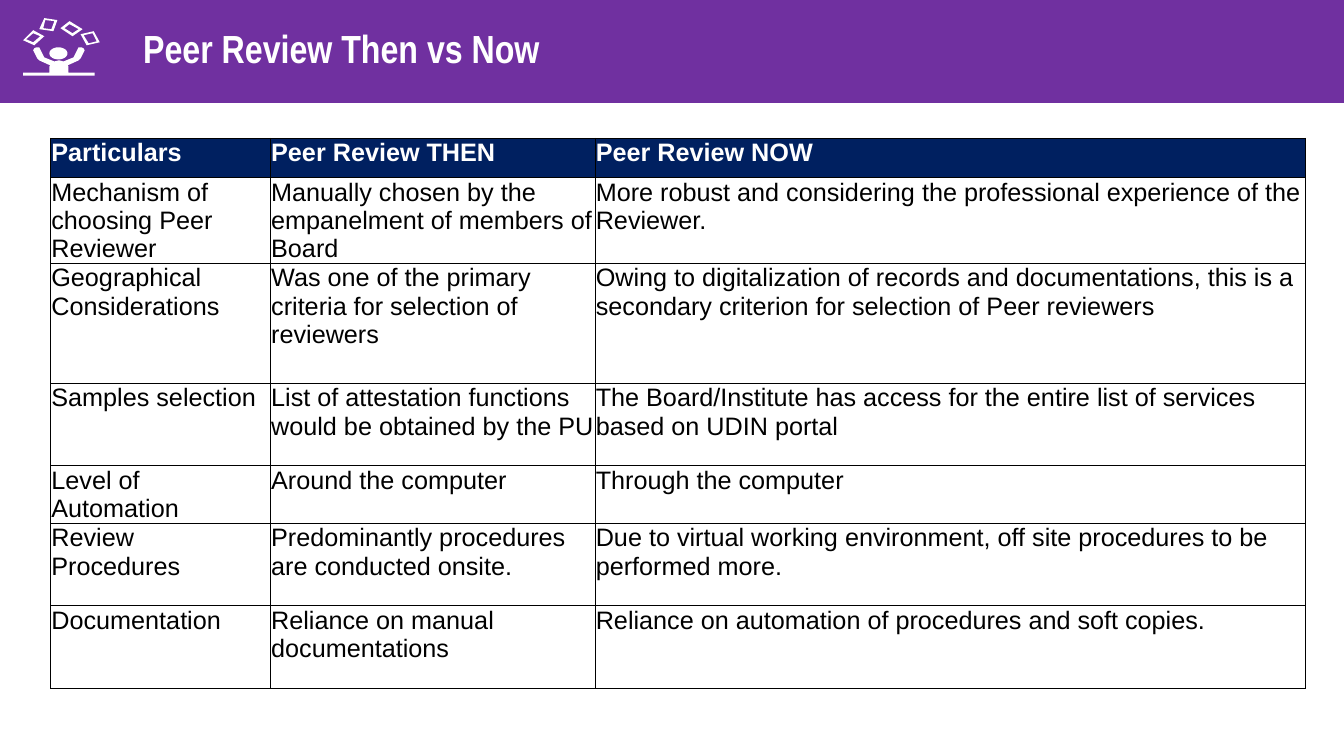
from math import cos, pi, sin

from lxml.etree import SubElement as Sub
from pptx import Presentation
from pptx.dml.color import RGBColor as Rgb
from pptx.enum.shapes import MSO_SHAPE as Shape
from pptx.enum.text import MSO_ANCHOR as Anchor, PP_ALIGN as Align
from pptx.oxml.ns import qn
from pptx.util import Inches, Pt

COLS = [2.18, 3.22, 7.05]
HIGH = [0.39, 0.82, 1.19, 0.82, 0.45, 0.82, 0.82]
ROWS = [
    ["Particulars", "Peer Review THEN", "Peer Review NOW"],
    ["Mechanism of choosing Peer Reviewer",
     "Manually chosen by the empanelment of members of Board",
     "More robust and considering the professional experience of the Reviewer."],
    ["Geographical Considerations",
     "Was one of the primary criteria for selection of reviewers",
     "Owing to digitalization of records and documentations, this is a "
     "secondary criterion for selection of Peer reviewers"],
    ["Samples selection",
     "List of attestation functions would be obtained by the PU",
     "The Board/Institute has access for the entire list of services "
     "based on UDIN portal"],
    ["Level of Automation", "Around the computer", "Through the computer"],
    ["Review Procedures",
     "Predominantly procedures are conducted onsite.",
     "Due to virtual working environment, off site procedures to be "
     "performed more."],
    ["Documentation",
     "Reliance on manual documentations",
     "Reliance on automation of procedures and soft copies."],
]

CARDS = [
    [(0.33, 0.3), (0.44, 0.36), (0.34, 0.45), (0.23, 0.4)],
    [(0.33, 0.33), (0.26, 0.39), (0.33, 0.42), (0.4, 0.36)],
    [(0.69, 0.21), (0.6, 0.28), (0.72, 0.36), (0.82, 0.29)],
    [(0.69, 0.24), (0.78, 0.29), (0.72, 0.33), (0.64, 0.28)],
    [(0.57, 0.2), (0.44, 0.18), (0.39, 0.29), (0.53, 0.31)],
    [(0.54, 0.21), (0.51, 0.29), (0.43, 0.28), (0.45, 0.2)],
    [(0.93, 0.31), (0.99, 0.42), (0.86, 0.45), (0.8, 0.34)],
    [(0.92, 0.33), (0.83, 0.35), (0.88, 0.43), (0.96, 0.41)],
]
HALF = [(0.58, 0.6), (0.54, 0.61), (0.44, 0.57), (0.4, 0.49), (0.39, 0.47),
        (0.36, 0.47), (0.34, 0.48), (0.33, 0.5), (0.37, 0.58), (0.39, 0.6),
        (0.5, 0.65), (0.49, 0.66), (0.49, 0.72), (0.23, 0.72), (0.23, 0.75)]


def color(code):
    return Rgb.from_string(code)


def paint(shape, code):
    shape.shadow.inherit = False
    shape.fill.solid()
    shape.fill.fore_color.rgb = color(code)


def style(par, face, size, code, bold):
    par.alignment = Align.LEFT
    font = par.font
    font.name, font.size, font.bold = face, Pt(size), bold
    font.color.rgb = color(code)


def add_banner(slide, text):
    bar = slide.shapes.add_shape(Shape.RECTANGLE, Inches(-0.04), Inches(-0.08),
                                 Inches(13.37), Inches(1.11))
    paint(bar, "7030A0")
    bar.line.color.rgb = color("FFFFFF")
    bar.line.width = Pt(0.5)
    frame = bar.text_frame
    frame.margin_left = Inches(1.46)
    frame.vertical_anchor = Anchor.MIDDLE
    frame.text = text
    style(frame.paragraphs[0], "Arial Narrow", 28, "FFFFFF", True)


def add_icon(slide):
    turns = [2 * pi * step / 24 for step in range(24)]
    head = [(0.58 + 0.09 * cos(turn), 0.53 + 0.06 * sin(turn)) for turn in turns]
    body = HALF + [(1.17 - x, y) for x, y in reversed(HALF)]
    loops = [[(Inches(x), Inches(y)) for x, y in loop]
             for loop in CARDS + [head, body]]
    pen = slide.shapes.build_freeform(*loops[0][0])
    for loop in loops:
        pen.move_to(*loop[0])
        pen.add_line_segments(loop[1:], close=True)
    icon = pen.convert_to_shape()
    paint(icon, "FFFFFF")
    icon.line.fill.background()


def add_edges(cell):
    props = cell._tc.get_or_add_tcPr()
    for side in ("lnL", "lnR", "lnT", "lnB"):
        edge = Sub(props, qn("a:" + side), w=str(Pt(0.5)))
        fill = Sub(edge, qn("a:solidFill"))
        Sub(fill, qn("a:srgbClr"), val="000000")


def fill_cell(cell, text, top):
    cell.margin_left = cell.margin_right = cell.margin_top = Inches(0.01)
    cell.margin_bottom = 0
    add_edges(cell)
    if top:
        cell.fill.solid()
        cell.fill.fore_color.rgb = color("002060")
    else:
        cell.fill.background()
    cell.text = text
    style(cell.text_frame.paragraphs[0], "Arial", 18,
          "FFFFFF" if top else "000000", top)


def add_grid(slide):
    frame = slide.shapes.add_table(len(ROWS), len(COLS), Inches(0.5), Inches(1.37),
                                   Inches(sum(COLS)), Inches(sum(HIGH)))
    table = frame.table
    for col, width in zip(table.columns, COLS):
        col.width = Inches(width)
    for row, high, texts in zip(table.rows, HIGH, ROWS):
        row.height = Inches(high)
        for cell, text in zip(row.cells, texts):
            fill_cell(cell, text, texts is ROWS[0])


def main():
    deck = Presentation()
    deck.slide_width, deck.slide_height = Inches(13.33), Inches(7.5)
    slide = deck.slides.add_slide(deck.slide_layouts[6])
    add_banner(slide, "Peer Review Then vs Now")
    add_icon(slide)
    add_grid(slide)
    deck.save("out.pptx")


if __name__ == "__main__":
    main()
